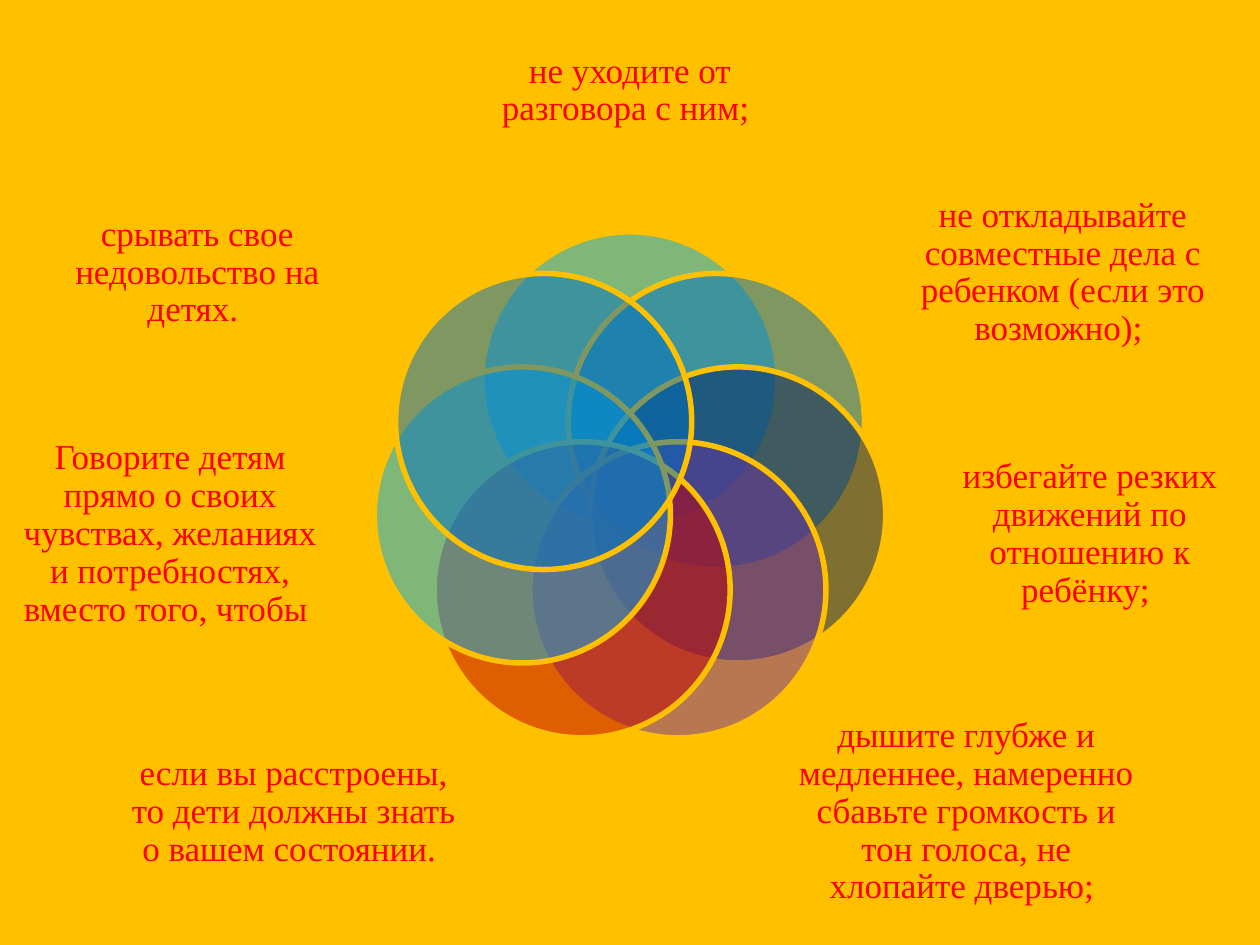
"""Builds a slide with a ring of seven overlapping circles, each with advice beside it."""
from dataclasses import dataclass
from math import cos, pi, sin

from lxml import etree
from pptx import Presentation
from pptx.dml.color import RGBColor
from pptx.enum import shapes, text
from pptx.oxml import ns
from pptx.util import Pt

WIDE, HIGH = 720, 540
MID_X, MID_Y = 360, 280.2
RING, SIZE = 63.1, 169.2
GOLD, RED = "FFC000", "FF0000"


@dataclass
class Petal:
    color: str
    words: str
    left: float
    top: float
    width: float
    height: float


PETALS = [
    Petal("00B0F0", "не уходите от разговора с ним; ", 262.8, 0, 194.4, 103.7),
    Petal("0070C0", "не откладывайте совместные дела с ребенком (если это возможно); ",
          515.5, 98.6, 183.6, 114.5),
    Petal("002060", "избегайте резких движений по отношению к ребёнку; ",
          532.8, 244.1, 180, 122.4),
    Petal("7030A0", "дышите глубже и медленнее, намеренно сбавьте громкость и "
          "тон голоса, не хлопайте дверью; ", 455, 408.2, 194.4, 111.6),
    Petal("C00000", "если вы расстроены, то дети должны знать о вашем состоянии. ",
          70.6, 408.2, 194.4, 111.6),
    Petal("00B0F0", "Говорите детям прямо о своих чувствах, желаниях и "
          "потребностях, вместо того, чтобы ", 7.2, 244.1, 180, 122.4),
    Petal("0070C0", "срывать свое недовольство на детях. ", 20.9, 98.6, 183.6, 114.5),
]


def paint(fill, color: str) -> None:
    fill.solid()
    fill.fore_color.rgb = RGBColor.from_string(color)


def draw_disc(group, petal: Petal, angle: float) -> None:
    left = MID_X + RING * sin(angle) - SIZE / 2
    top = MID_Y - RING * cos(angle) - SIZE / 2
    disc = group.shapes.add_shape(
        shapes.MSO_SHAPE.OVAL, Pt(left), Pt(top), Pt(SIZE), Pt(SIZE))
    disc.shadow.inherit = False
    paint(disc.fill, petal.color)
    tint = disc.element.spPr.find(ns.qn("a:solidFill"))[0]
    etree.SubElement(tint, ns.qn("a:alpha"), val="50000")
    paint(disc.line.fill, GOLD)
    disc.line.width = Pt(3.15)


def draw_words(group, petal: Petal) -> None:
    box = group.shapes.add_textbox(
        Pt(petal.left), Pt(petal.top), Pt(petal.width), Pt(petal.height))
    frame = box.text_frame
    frame.word_wrap = True
    frame.vertical_anchor = text.MSO_ANCHOR.MIDDLE
    frame.margin_left = frame.margin_right = Pt(0)
    frame.margin_top = frame.margin_bottom = Pt(0)
    frame.text = petal.words
    line = frame.paragraphs[0]
    line.alignment = text.PP_ALIGN.CENTER
    line.line_spacing = 0.9
    font = line.runs[0].font
    font.name = "Times New Roman"
    font.size = Pt(20)
    paint(font.fill, RED)


def main() -> None:
    deck = Presentation()
    deck.slide_width, deck.slide_height = Pt(WIDE), Pt(HIGH)
    slide = deck.slides.add_slide(deck.slide_layouts[6])
    paint(slide.background.fill, GOLD)
    group = slide.shapes.add_group_shape()
    for step, petal in enumerate(PETALS):
        draw_disc(group, petal, 2 * pi * step / len(PETALS))
        draw_words(group, petal)
    deck.save("out.pptx")


if __name__ == "__main__":
    main()
